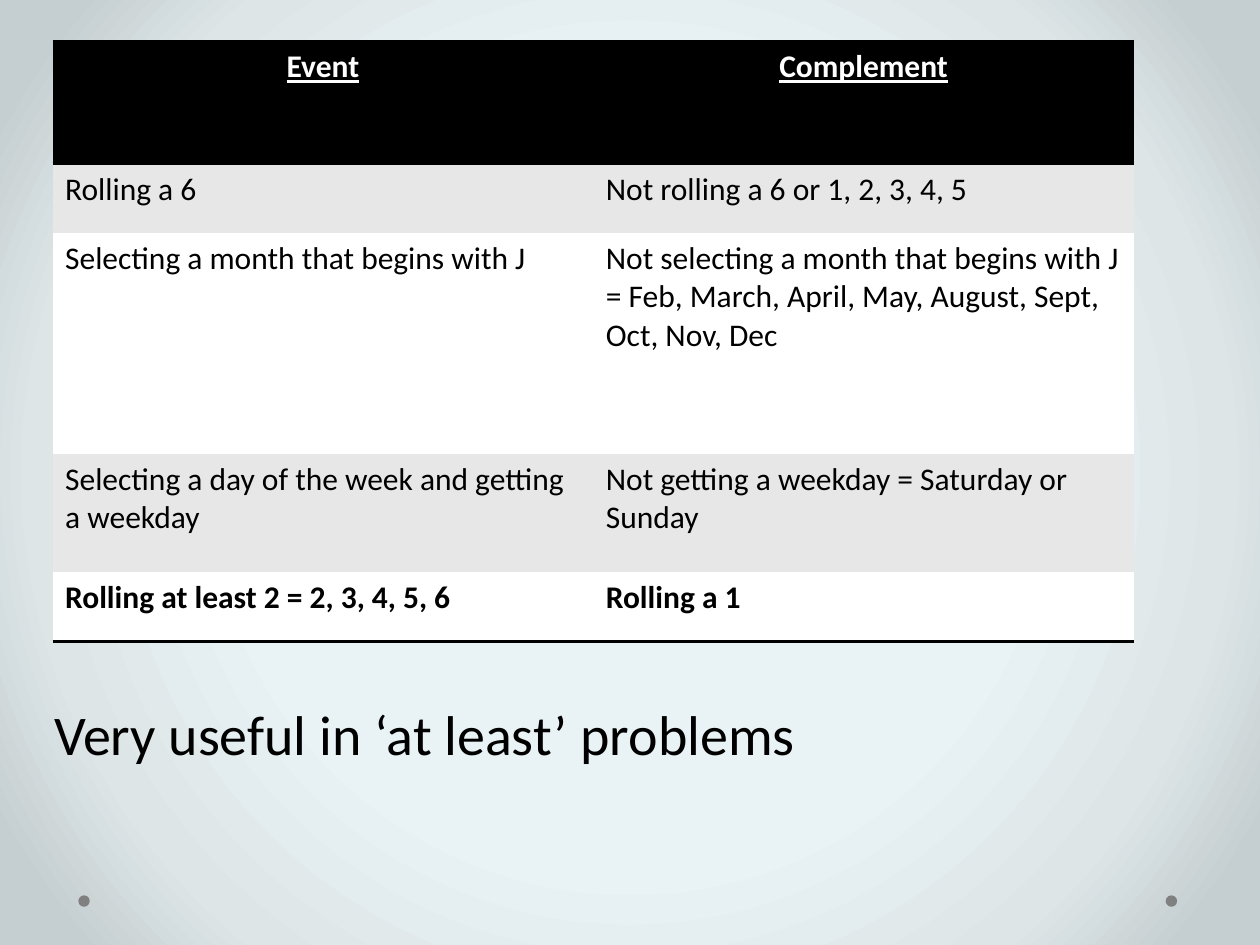
from pptx import Presentation
from pptx.dml.color import RGBColor
from pptx.enum.shapes import MSO_SHAPE
from pptx.enum.text import PP_ALIGN
from pptx.oxml import parse_xml
from pptx.oxml.ns import nsdecls
from pptx.util import Cm, Pt

ROWS = [
    ("Event", "Complement"),
    ("Rolling a 6", "Not rolling a 6 or 1, 2, 3, 4, 5"),
    ("Selecting a month that begins with J",
     "Not selecting a month that begins with J = Feb, March, April, May, "
     "August, Sept, Oct, Nov, Dec"),
    ("Selecting a day of the week and getting a weekday",
     "Not getting a weekday = Saturday or Sunday"),
    ("Rolling at least 2 = 2, 3, 4, 5, 6", "Rolling a 1"),
]
HEIGHTS = [2.46, 1.4, 4.45, 2.39, 1.4]
PLAIN = "{2D5ABB26-0587-4C30-8999-92F81FD0307C}"  # no style, no grid


def paint(fill, color):
    fill.solid()
    fill.fore_color.rgb = RGBColor.from_string(color)


def write(frame, text, size=18, color="000000", bold=False, line=False,
          align=PP_ALIGN.LEFT):
    frame.word_wrap = True
    par = frame.paragraphs[0]
    par.alignment = align
    run = par.add_run()
    run.text = text
    font = run.font
    font.name, font.size = "Calibri", Pt(size)
    font.bold, font.underline = bold, line
    font.color.rgb = RGBColor.from_string(color)


def rule(cell, side, color="000000", width=2):
    """Add a border to a cell; call it before the cell is filled."""
    cell._tc.get_or_add_tcPr().append(parse_xml(
        f'<a:ln{side} {nsdecls("a")} w="{Pt(width)}"><a:solidFill>'
        f'<a:srgbClr val="{color}"/></a:solidFill></a:ln{side}>'))


def add_back(slide, stops):
    """Set a round gradient that spreads from the centre of the slide."""
    marks = "".join(f'<a:gs pos="{pos * 1000}"><a:srgbClr val="{color}"/></a:gs>'
                    for pos, color in stops)
    slide._element.cSld.insert(0, parse_xml(
        f'<p:bg {nsdecls("p", "a")}><p:bgPr><a:gradFill rotWithShape="1">'
        f'<a:gsLst>{marks}</a:gsLst><a:path path="circle">'
        '<a:fillToRect l="50000" t="50000" r="50000" b="50000"/></a:path>'
        '</a:gradFill><a:effectLst/></p:bgPr></p:bg>'))


def add_dots(slide, left, top, width, size):
    """Put a dot at each end of the given strip."""
    for x in (left, left + width - size):
        dot = slide.shapes.add_shape(MSO_SHAPE.OVAL, Cm(x), Cm(top),
                                     Cm(size), Cm(size))
        dot.shadow.inherit = False
        paint(dot.fill, "808080")
        dot.line.fill.background()


def add_events(slide, left, top, width):
    frame = slide.shapes.add_table(len(ROWS), 2, Cm(left), Cm(top),
                                   Cm(width), Cm(sum(HEIGHTS)))
    table = frame.table
    table.horz_banding = False
    table._tbl.tblPr.find("{*}tableStyleId").text = PLAIN
    last = len(ROWS) - 1
    for i, (texts, height) in enumerate(zip(ROWS, HEIGHTS)):
        table.rows[i].height = Cm(height)
        for cell, text in zip(table.rows[i].cells, texts):
            if i == 0:
                rule(cell, "T")
            if i in (0, last):
                rule(cell, "B")
            if i == 0:
                paint(cell.fill, "000000")
                write(cell.text_frame, text, color="FFFFFF", bold=True,
                      line=True, align=PP_ALIGN.CENTER)
            else:
                paint(cell.fill, "E7E7E7" if i % 2 else "FFFFFF")
                write(cell.text_frame, text, bold=i == last)


def add_note(slide, left, top, width, height):
    box = slide.shapes.add_textbox(Cm(left), Cm(top), Cm(width), Cm(height))
    write(box.text_frame, "Very useful in ‘at least’ problems", size=32)


def main():
    deck = Presentation()
    deck.slide_width, deck.slide_height = Cm(25.4), Cm(19.05)
    slide = deck.slides.add_slide(deck.slide_layouts[6])
    add_back(slide, [(50, "E9F2F4"), (76, "DDE5E7"), (92, "C5CED0")])
    add_dots(slide, 1.58, 18.05, 22.15, 0.23)
    add_events(slide, 1.06, 0.84, 21.8)
    add_note(slide, 0.84, 13.97, 24.56, 1.62)
    deck.save("out.pptx")


if __name__ == "__main__":
    main()
